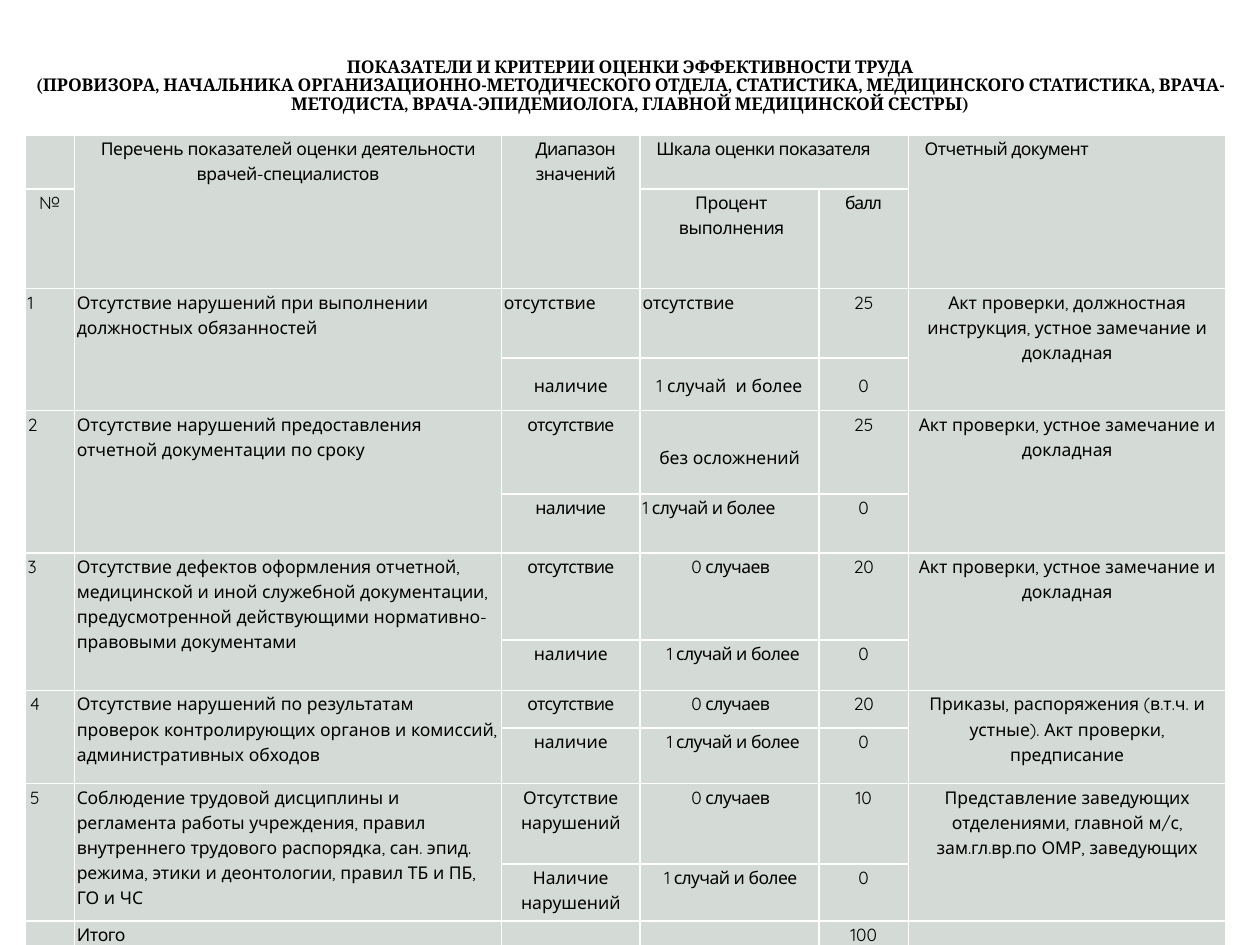
import pptx
import pptx.util
import pptx.dml.color
import pptx.enum.text
import pptx.oxml
import pptx.oxml.ns

Inches = pptx.util.Inches
Align = pptx.enum.text.PP_ALIGN
Anchor = pptx.enum.text.MSO_ANCHOR

COLORS = {"cell": "D4DAD6", "border": "FFFFFF", "text": "000000"}
COLUMN_WIDTHS = [0.39, 3.39, 1.1, 1.42, 0.71, 2.52]
ROW_HEIGHTS = [0.43, 0.79, 0.55, 0.42, 0.66, 0.47, 0.69,
               0.4, 0.3, 0.44, 0.64, 0.45, 0.3]
TITLE = (
    "ПОКАЗАТЕЛИ И КРИТЕРИИ ОЦЕНКИ ЭФФЕКТИВНОСТИ ТРУДА\v"
    "(ПРОВИЗОРА, НАЧАЛЬНИКА ОРГАНИЗАЦИОННО-МЕТОДИЧЕСКОГО ОТДЕЛА, СТАТИСТИКА, "
    "МЕДИЦИНСКОГО СТАТИСТИКА, ВРАЧА-МЕТОДИСТА, ВРАЧА-ЭПИДЕМИОЛОГА, "
    "ГЛАВНОЙ МЕДИЦИНСКОЙ СЕСТРЫ)"
)


def entry(text, **style):
    """Pair the text of a cell with its format."""
    return text, style


def left(text, **style):
    return entry(text, align=Align.LEFT, **style)


# row, column, rows spanned, columns spanned, content
HEADER = [
    (0, 1, 2, 1, entry("Перечень показателей оценки деятельности врачей-специалистов",
                       spacing=-0.2)),
    (0, 2, 2, 1, entry("Диапазон\nзначений", indent=0.08, spacing=-0.3)),
    (0, 3, 1, 2, left("Шкала оценки показателя", indent=0.11, spacing=-0.3)),
    (0, 5, 2, 1, left("Отчетный документ", indent=0.11, spacing=-0.3)),
    (1, 0, 1, 1, left("№", indent=0.09)),
    (1, 3, 1, 1, entry("Процент\nвыполнения", indent=0.03, spacing=-0.2)),
    (1, 4, 1, 1, entry("балл", spacing=-0.7)),
]

NO_CASES = entry("0 случаев", indent=0.02, spacing=-0.3)
ONE_CASE = entry("1 случай и более", indent=0.06, spacing=-0.3)
ABSENT = entry("отсутствие", spacing=-0.3)
PRESENT = entry("наличие")
ZERO = entry("0")
REPORT = "Акт проверки, устное замечание и докладная"

# number, indicator, document, two levels of (range, percent, score)
INDICATORS = [
    (left("1", spacing=-0.1),
     "Отсутствие нарушений при выполнении должностных обязанностей",
     "Акт проверки, должностная инструкция, устное замечание и докладная",
     [(left("отсутствие"), left("отсутствие"), entry("25")),
      (entry("наличие", anchor=Anchor.MIDDLE),
       entry("1 случай  и более", anchor=Anchor.MIDDLE),
       entry("0", anchor=Anchor.MIDDLE))]),
    (left("2", spacing=-0.1),
     "Отсутствие нарушений предоставления отчетной документации по сроку",
     REPORT,
     [(ABSENT, entry("без осложнений", anchor=Anchor.BOTTOM, bottom=0.2), entry("25")),
      (entry("наличие", spacing=-0.3), left("1 случай и более", spacing=-0.3), ZERO)]),
    (left("3"),
     "Отсутствие дефектов оформления отчетной, медицинской и иной служебной "
     "документации, предусмотренной действующими нормативно-правовыми документами",
     REPORT,
     [(ABSENT, NO_CASES, entry("20")), (PRESENT, ONE_CASE, ZERO)]),
    (left("4", indent=0.02),
     "Отсутствие нарушений по результатам проверок контролирующих органов и "
     "комиссий, административных обходов",
     "Приказы, распоряжения (в.т.ч. и устные). Акт проверки, предписание",
     [(ABSENT, NO_CASES, entry("20")), (PRESENT, ONE_CASE, ZERO)]),
    (left("5", indent=0.02),
     "Соблюдение трудовой дисциплины и регламента работы учреждения, правил "
     "внутреннего трудового распорядка, сан. эпид. режима, этики и деонтологии, "
     "правил ТБ и ПБ, ГО и ЧС",
     "Представление заведующих отделениями, главной м/с, зам.гл.вр.по ОМР, заведующих",
     [(entry("Отсутствие нарушений"), NO_CASES, entry("10")),
      (entry("Наличие нарушений"),
       entry("1 случай и более", indent=0.02, spacing=-0.3), ZERO)]),
]


def write_text(frame, text, font="Quicksand", size=10, bold=False,
               align=Align.CENTER, line_spacing=1.15, indent=0, spacing=0):
    """Fill a text frame; each line of the text becomes a paragraph."""
    frame.text = text
    for paragraph in frame.paragraphs:
        paragraph.alignment = align
        paragraph.line_spacing = line_spacing
        if indent:
            paragraph._p.get_or_add_pPr().set("marL", str(Inches(indent)))
        for span in paragraph.runs:
            span.font.name = font
            span.font.size = pptx.util.Pt(size)
            span.font.bold = bold
            span.font.color.rgb = pptx.dml.color.RGBColor.from_string(COLORS["text"])
            if spacing:
                span._r.get_or_add_rPr().set("spc", str(round(spacing * 100)))


def format_cell(cell):
    """Give a cell its borders, fill and margins."""
    properties = cell._tc.get_or_add_tcPr()
    for side in ("lnL", "lnR", "lnT", "lnB"):
        properties.append(pptx.oxml.parse_xml(
            f'<a:{side} {pptx.oxml.ns.nsdecls("a")} w="12700"><a:solidFill>'
            f'<a:srgbClr val="{COLORS["border"]}"/></a:solidFill></a:{side}>'))
    cell.fill.solid()
    cell.fill.fore_color.rgb = pptx.dml.color.RGBColor.from_string(COLORS["cell"])
    cell.margin_left = cell.margin_right = Inches(0.02)
    cell.margin_top = cell.margin_bottom = 0


def fill_cell(table, row, column, content, rows=1, columns=1):
    text, style = content
    style = dict(style)
    cell = table.cell(row, column)
    if rows > 1 or columns > 1:
        cell.merge(table.cell(row + rows - 1, column + columns - 1))
    cell.vertical_anchor = style.pop("anchor", Anchor.TOP)
    cell.margin_bottom = Inches(style.pop("bottom", 0))
    write_text(cell.text_frame, text, **style)


def add_title(page):
    title = page.shapes.title
    title.left, title.top = Inches(0), Inches(0.3)
    title.width, title.height = Inches(10), Inches(0.77)
    title.text_frame.word_wrap = True
    title.text_frame.vertical_anchor = Anchor.MIDDLE
    write_text(title.text_frame, TITLE, font="Cambria", bold=True, line_spacing=0.9)


def add_grid(page):
    frame = page.shapes.add_table(
        len(ROW_HEIGHTS), len(COLUMN_WIDTHS), Inches(0.2), Inches(1.07),
        Inches(sum(COLUMN_WIDTHS)), Inches(sum(ROW_HEIGHTS)))
    table = frame.table
    table.first_row = table.horz_banding = False
    for column, width in zip(table.columns, COLUMN_WIDTHS):
        column.width = Inches(width)
    for row, height in zip(table.rows, ROW_HEIGHTS):
        row.height = Inches(height)
    for cell in table.iter_cells():
        format_cell(cell)
    return table


def fill_table(table):
    for row, column, rows, columns, content in HEADER:
        fill_cell(table, row, column, content, rows, columns)
    for index, (number, indicator, document, levels) in enumerate(INDICATORS):
        top = 2 + 2 * index
        fill_cell(table, top, 0, number, rows=2)
        fill_cell(table, top, 1, left(indicator), rows=2)
        fill_cell(table, top, 5, entry(document), rows=2)
        for row, level in enumerate(levels, top):
            for column, content in enumerate(level, 2):
                fill_cell(table, row, column, content)
    total_row = len(ROW_HEIGHTS) - 1
    fill_cell(table, total_row, 1, left("Итого", spacing=-0.2))
    fill_cell(table, total_row, 4, entry("100"))


def main():
    deck = pptx.Presentation()
    deck.slide_width, deck.slide_height = Inches(10), Inches(7.5)
    page = deck.slides.add_slide(deck.slide_layouts[5])
    add_title(page)
    fill_table(add_grid(page))
    deck.save("out.pptx")


if __name__ == "__main__":
    main()
